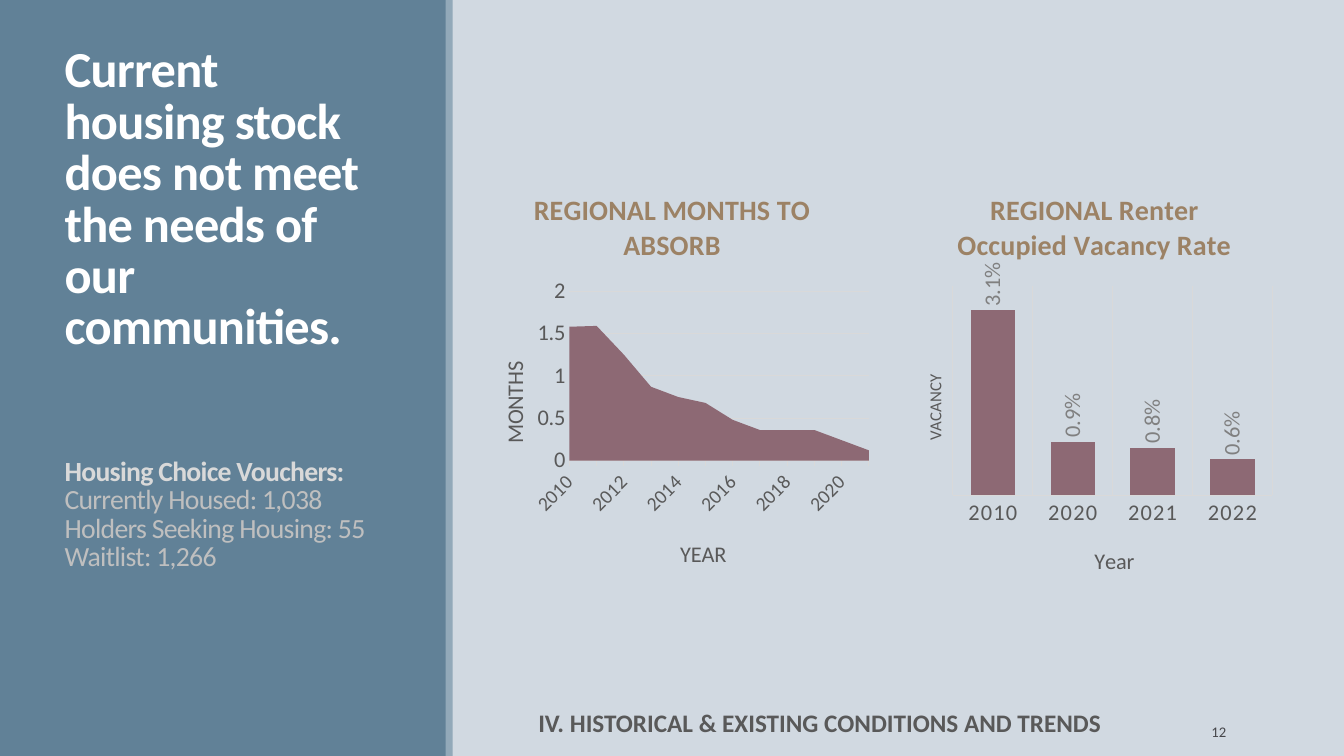
from dataclasses import dataclass

from pptx import Presentation
from pptx.chart.data import CategoryChartData
from pptx.dml.color import RGBColor
from pptx.enum.chart import XL_CHART_TYPE, XL_LABEL_POSITION, XL_TICK_MARK
from pptx.enum.shapes import MSO_SHAPE
from pptx.enum.text import MSO_ANCHOR, PP_ALIGN
from pptx.oxml import parse_xml
from pptx.oxml.ns import nsdecls
from pptx.util import Inches, Pt


@dataclass(frozen=True)
class Theme:
    font: str = "Calibri"
    background: str = "D1D9E1"
    panel: str = "618197"
    edge: str = "92A9B9"
    white: str = "FFFFFF"
    subhead: str = "D9D9D9"
    detail: str = "BFBFBF"
    number: str = "46464A"
    text: str = "595959"
    label: str = "808080"
    grid: str = "D9D9D9"
    heading: str = "9C8265"
    series: str = "8D6974"
    title_size: float = 36
    body_size: float = 19.8
    chart_title_size: float = 20
    footer_size: float = 18
    axis_size: float = 16
    small_axis_size: float = 14
    tiny_axis_size: float = 12
    number_size: float = 10.5


class SlideBuilder:
    def __init__(self, prs, theme):
        self.t = theme
        self.s = prs.slides.add_slide(prs.slide_layouts[5])
        self.s.background.fill.solid()
        self.s.background.fill.fore_color.rgb = RGBColor.from_string(theme.background)

    def style(self, font, size, color, bold=False):
        font.name, font.size, font.bold = self.t.font, Pt(size), bold
        font.color.rgb = RGBColor.from_string(color)

    def run(self, p, text, size, color, bold=False):
        r = p.add_run()
        r.text = text
        self.style(r.font, size, color, bold)
        return r

    def rect(self, x, y, w, h, color):
        sp = self.s.shapes.add_shape(
            MSO_SHAPE.RECTANGLE, Inches(x), Inches(y), Inches(w), Inches(h))
        sp.shadow.inherit = False
        sp.fill.solid()
        sp.fill.fore_color.rgb = RGBColor.from_string(color)
        sp.line.fill.background()

    def title(self, x, y, w, h, lines):
        """Each line is text, size, colour, bold, space after in points."""
        sp = self.s.shapes.title
        sp.left, sp.top, sp.width, sp.height = (Inches(v) for v in (x, y, w, h))
        tf = sp.text_frame
        tf.word_wrap = True
        tf.vertical_anchor = MSO_ANCHOR.MIDDLE
        tf.margin_bottom = Inches(1.4)
        for i, (text, size, color, bold, after) in enumerate(lines):
            p = tf.add_paragraph() if i else tf.paragraphs[0]
            p.alignment = PP_ALIGN.LEFT
            p.line_spacing = 0.85
            p.space_before, p.space_after = Pt(0), Pt(after)
            r = self.run(p, text, size, color, bold)
            r.font._element.set("spc", "-50")

    def text(self, x, y, w, h, text, size, color, bold=False, align=PP_ALIGN.LEFT):
        tf = self.s.shapes.add_textbox(
            Inches(x), Inches(y), Inches(w), Inches(h)).text_frame
        tf.word_wrap = True
        tf.vertical_anchor = MSO_ANCHOR.MIDDLE
        p = tf.paragraphs[0]
        p.alignment = align
        self.run(p, text, size, color, bold)

    def layout(self, parent, index, x, y, w=None, h=None):
        """Place a chart part by fractions of the chart area."""
        for old in parent.xpath("c:layout"):
            parent.remove(old)
        target = '<c:layoutTarget val="inner"/>' if w else ""
        size = f'<c:w val="{w}"/><c:h val="{h}"/>' if w else ""
        parent.insert(index, parse_xml(
            f'<c:layout {nsdecls("c")}><c:manualLayout>{target}'
            '<c:xMode val="edge"/><c:yMode val="edge"/>'
            f'<c:x val="{x}"/><c:y val="{y}"/>{size}</c:manualLayout></c:layout>'))

    def chart(self, kind, box, title, cats, vals, plot_box, fmt="General"):
        data = CategoryChartData(number_format=fmt)
        data.categories = cats
        data.add_series("Series 1", vals)
        chart = self.s.shapes.add_chart(kind, *(Inches(v) for v in box), data).chart
        self.style(chart.font, 10, self.t.text)
        chart.has_legend = False
        chart.has_title = True
        p = chart.chart_title.text_frame.paragraphs[0]
        self.run(p, title, self.t.chart_title_size, self.t.heading, True)
        self.layout(chart.element.xpath("c:chart/c:plotArea")[0], 0, *plot_box)
        chart.plots[0].vary_by_categories = False
        fill = chart.plots[0].series[0].format.fill
        fill.solid()
        fill.fore_color.rgb = RGBColor.from_string(self.t.series)
        return chart

    def axis(self, axis, title, title_size, title_at, label_size, grid, tick):
        axis.has_title = True
        p = axis.axis_title.text_frame.paragraphs[0]
        self.run(p, title, title_size, self.t.text)
        self.layout(axis.axis_title.element, 1, *title_at)
        self.style(axis.tick_labels.font, label_size, self.t.text)
        axis.major_tick_mark, axis.minor_tick_mark = tick, XL_TICK_MARK.NONE
        lines = [axis.format.line]
        axis.has_major_gridlines = grid
        if grid:
            lines.append(axis.major_gridlines.format.line)
        for line in lines:
            line.width = Pt(0.75)
            line.color.rgb = RGBColor.from_string(self.t.grid)


def scale(axis, top, step):
    axis.minimum_scale, axis.maximum_scale, axis.major_unit = 0, top, step


def rotate(chart, where, degrees):
    body = chart.element.xpath(f".//{where}/c:txPr/a:bodyPr")[0]
    body.set("rot", str(degrees * 60000))
    body.set("vert", "horz")


def main():
    t = Theme()
    prs = Presentation()
    prs.slide_width, prs.slide_height = Inches(13.33), Inches(7.5)
    b = SlideBuilder(prs, t)

    # Left panel, with the title moved in front of it
    b.rect(0, 0, 4.43, 7.5, t.panel)
    b.rect(4.42, 0, 0.07, 7.5, t.edge)
    b.s.shapes._spTree.append(b.s.shapes.title.element)
    b.title(0.54, 0.66, 3.37, 6.17, [
        ("Current housing stock does not meet the needs of our communities.",
         t.title_size, t.white, True, 74),
        ("Housing Choice Vouchers:", t.body_size, t.subhead, True, 0),
        ("Currently Housed: 1,038", t.body_size, t.detail, False, 0),
        ("Holders Seeking Housing: 55", t.body_size, t.detail, False, 0),
        ("Waitlist: 1,266", t.body_size, t.detail, False, 0),
    ])

    # Footer
    b.text(11.07, 7.06, 1.19, 0.4, "12", t.number_size, t.number, align=PP_ALIGN.RIGHT)
    b.text(5.24, 6.97, 6.62, 0.4, "IV. HISTORICAL & EXISTING CONDITIONS AND TRENDS",
           t.footer_size, t.text, True)

    # Months to absorb
    absorb = b.chart(
        XL_CHART_TYPE.AREA_STACKED, (4.63, 1.7, 4.07, 4.1), "REGIONAL MONTHS TO ABSORB",
        [str(year) for year in range(2010, 2022)],
        [1.58, 1.59, 1.25, 0.87, 0.75, 0.68, 0.48, 0.36, 0.36, 0.36, 0.24, 0.12],
        (0.25, 0.29, 0.73, 0.41))
    b.axis(absorb.category_axis, "YEAR", t.axis_size, (0.51, 0.88),
           t.small_axis_size, False, XL_TICK_MARK.OUTSIDE)
    b.axis(absorb.value_axis, "MONTHS", t.axis_size, (0.07, 0.45),
           t.axis_size, True, XL_TICK_MARK.NONE)
    absorb.value_axis.format.line.fill.background()
    scale(absorb.value_axis, 2, 0.5)
    rotate(absorb, "c:catAx", -45)
    absorb.element.xpath(".//c:catAx/c:noMultiLvlLbl")[0].addprevious(
        parse_xml(f'<c:tickLblSkip {nsdecls("c")} val="2"/>'))

    # Renter vacancy rate
    vacancy = b.chart(
        XL_CHART_TYPE.COLUMN_CLUSTERED, (8.85, 1.7, 4.01, 4.23),
        "REGIONAL Renter Occupied Vacancy Rate", ["2010", "2020", "2021", "2022"],
        [0.031, 0.009, 0.008, 0.006], (0.15, 0.27, 0.79, 0.49), "0.0%")
    b.axis(vacancy.category_axis, "Year", t.axis_size, (0.49, 0.87),
           t.axis_size, True, XL_TICK_MARK.NONE)
    vacancy.element.xpath(".//c:catAx/c:txPr//a:defRPr")[0].set("spc", "100")
    b.axis(vacancy.value_axis, "VACANCY", t.tiny_axis_size, (0.07, 0.47),
           t.axis_size, False, XL_TICK_MARK.NONE)
    scale(vacancy.value_axis, 0.035, 0.005)
    vacancy.value_axis.visible = False
    plot = vacancy.plots[0]
    plot.gap_width, plot.overlap = 80, -90
    plot.has_data_labels = True
    labels = plot.data_labels
    labels.show_value = True
    labels.position = XL_LABEL_POSITION.OUTSIDE_END
    labels.number_format, labels.number_format_is_linked = "0.0%", False
    b.style(labels.font, t.axis_size, t.label)
    rotate(vacancy, "c:dLbls", -90)

    prs.save("out.pptx")


if __name__ == "__main__":
    main()
